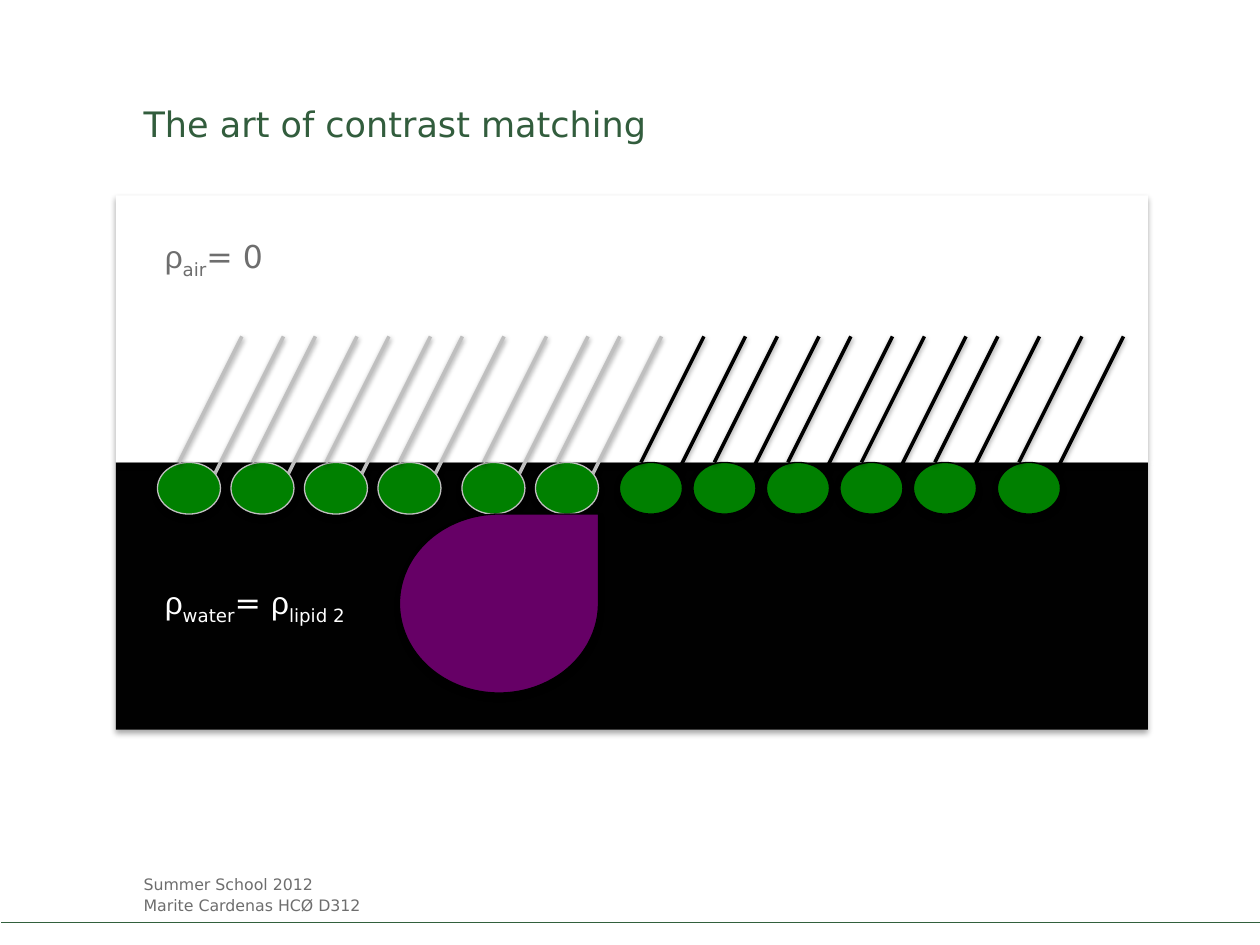
from lxml import etree
from pptx import Presentation
from pptx.dml.color import RGBColor
from pptx.enum.shapes import MSO_CONNECTOR as Connector, MSO_SHAPE as Shape
from pptx.enum.text import MSO_ANCHOR as Anchor
from pptx.oxml import parse_xml
from pptx.oxml.ns import nsdecls
from pptx.util import Inches, Pt

SANS = "DejaVu Sans"
GREY, SILVER, BLACK, WHITE = "6E6E6E", "BFBFBF", "000000", "FFFFFF"


def color(value):
    return RGBColor.from_string(value)


def style(item, line=None, width=0.75, fill=None, distance=1.8, alpha=35):
    """Set fill, line and a soft shadow straight below the item."""
    if fill:
        item.fill.solid()
        item.fill.fore_color.rgb = color(fill)
    if line:
        item.line.color.rgb = color(line)
        item.line.width = Pt(width)
    else:
        item.line.fill.background()
    effects = etree.SubElement(item._element.spPr, "{http://schemas.openxmlformats.org/drawingml/2006/main}effectLst")
    if distance:
        effects.append(parse_xml(
            f'<a:outerShdw {nsdecls("a")} blurRad="{Pt(3.1)}" dist="{Pt(distance)}" '
            f'dir="5400000" rotWithShape="0"><a:srgbClr val="000000">'
            f'<a:alpha val="{alpha * 1000}"/></a:srgbClr></a:outerShdw>'))


deck = Presentation()
deck.slide_width, deck.slide_height = Inches(10), Inches(7.5)
page = deck.slides.add_slide(deck.slide_layouts[6])
shapes = page.shapes

# Title and footer
for rect, lines, size, ink, anchor in [
    ((1.14, 0.52, 6.44, 0.63), ["The art of contrast matching"], 20, "325D3D", Anchor.BOTTOM),
    ((1.14, 6.94, 7.86, 0.31), ["Summer School 2012", "Marite Cardenas HCØ D312"], 9, GREY, Anchor.TOP),
]:
    frame = shapes.add_textbox(*map(Inches, rect)).text_frame
    frame.word_wrap = True
    frame.vertical_anchor = anchor
    frame.margin_left = frame.margin_right = frame.margin_top = frame.margin_bottom = 0
    for index, line in enumerate(lines):
        para = frame.add_paragraph() if index else frame.paragraphs[0]
        para.text = line
        para.font.name, para.font.size = SANS, Pt(size)
        para.font.color.rgb = color(ink)
        if index:
            para.line_spacing = 1.1

# Footer rule
rule = shapes.add_connector(Connector.STRAIGHT, Inches(0.01), Inches(7.32), Inches(10.01), Inches(7.32))
style(rule, "32603D", distance=0)

# Water below, air above
SURFACE, DEPTH = 3.67, 2.12
for top, fill in [(SURFACE, "010101"), (SURFACE - DEPTH, WHITE)]:
    phase = shapes.add_shape(Shape.RECTANGLE, Inches(0.92), Inches(top), Inches(8.19), Inches(DEPTH))
    style(phase, fill=fill)

# Lipids: a head between two tails, with a wider gap before some of them
PITCH, EXTRA, TAIL_TOP = 7 / 12, 1 / 12, 2.67
left = 1.25
for index in range(12):
    if index in (4, 6, 11):
        left += EXTRA
    ink = SILVER if index < 6 else BLACK
    lipid = shapes.add_group_shape().shapes
    for part in ("back tail", "head", "front tail"):
        if part == "head":
            head = lipid.add_shape(Shape.OVAL, Inches(left), Inches(SURFACE), Inches(0.5), Inches(0.41))
            style(head, ink, fill="008000")
            continue
        start, end, bottom = (1, 0.42, 3.83) if part == "back tail" else (0.67, 0.17, SURFACE)
        tail = lipid.add_connector(Connector.STRAIGHT, Inches(left + start), Inches(TAIL_TOP),
                                   Inches(left + end), Inches(bottom))
        style(tail, ink, width=2, distance=1.6, alpha=38)
    left += PITCH

# Scattering length densities, with subscripts
for top, ink, spans in [
    (1.83, GREY, [("ρ", 0), ("air", -25), ("= 0", 0)]),
    (4.58, WHITE, [("ρ", 0), ("water", -25), ("= ", 0), ("ρ", 0), ("lipid 2", -25)]),
]:
    frame = shapes.add_textbox(Inches(1.21), Inches(top), Inches(1.96), Inches(0.4)).text_frame
    frame.word_wrap = True
    para = frame.paragraphs[0]
    para.font.size = Pt(18)
    para.font.color.rgb = color(ink)
    for text, baseline in spans:
        span = para.add_run()
        span.text = text
        span.font.name = "Arial" if text == "ρ" else SANS
        if baseline:
            span.font._element.set("baseline", str(baseline * 1000))

# Protein under the monolayer
protein = shapes.add_shape(Shape.TEAR, Inches(3.17), Inches(4.08), Inches(1.58), Inches(1.42))
style(protein, BLACK, fill="660066")

deck.save("out.pptx")
